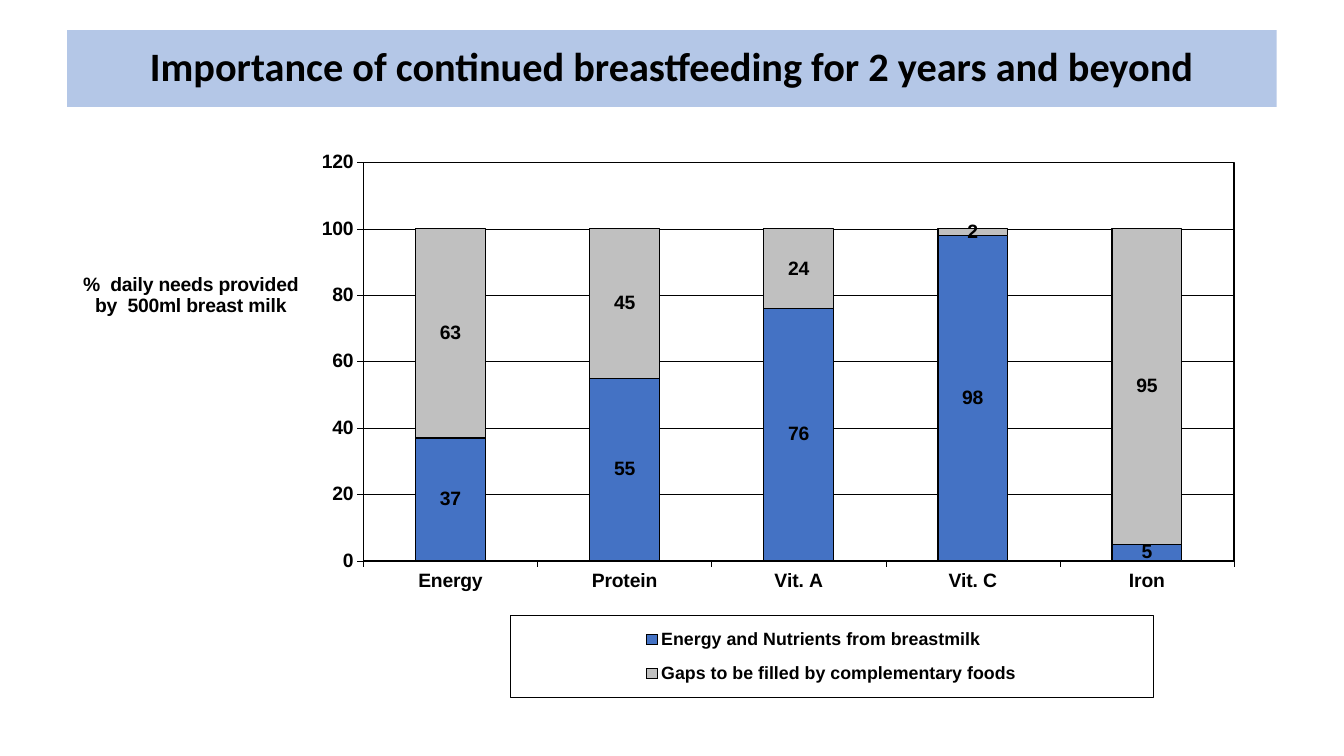
from lxml import etree
from pptx import Presentation
from pptx import util as u
from pptx.chart import data as cd
from pptx.dml.color import RGBColor
from pptx.enum import chart as ec, text as et
from pptx.oxml import ns

Pt = u.Pt
HUES = {"ink": "000000", "band": "B4C7E7", "milk": "4472C4", "gap": "C0C0C0"}
CATS = ["Energy", "Protein", "Vit. A", "Vit. C", "Iron"]
ROWS = [
    ("Energy and Nutrients from breastmilk", "milk", (37, 55, 76, 98, 5)),
    ("Gaps to be filled by complementary foods", "gap", (63, 45, 24, 2, 95)),
]


def hue(key):
    return RGBColor.from_string(HUES[key])


def set_font(font, name, size):
    font.name, font.size, font.bold = name, Pt(size), True
    font.color.rgb = hue("ink")


def set_line(line, width):
    line.color.rgb = hue("ink")
    line.width = Pt(width)


def layout(x, y, w=None, h=None, inner=False):
    """Manual chart layout, in shares of the chart's size."""
    root = etree.Element(ns.qn("c:layout"), nsmap={"c": ns.nsuri("c")})
    man = etree.SubElement(root, ns.qn("c:manualLayout"))
    pairs = [("layoutTarget", "inner")] if inner else []
    pairs += [("xMode", "edge"), ("yMode", "edge"), ("x", x), ("y", y)]
    if w:
        pairs += [("w", w), ("h", h)]
    for tag, val in pairs:
        etree.SubElement(man, ns.qn("c:" + tag)).set("val", str(val))
    return root


def place(part, after, lay):
    """Put a layout into a chart part, behind the named child or first."""
    for old in part.findall(ns.qn("c:layout")):
        part.remove(old)
    if after:
        part.find(ns.qn(after)).addnext(lay)
    else:
        part.insert(0, lay)


def frame(width):
    """Unfilled black outline for a chart part."""
    prop = etree.Element(ns.qn("c:spPr"), nsmap={k: ns.nsuri(k) for k in "ca"})
    etree.SubElement(prop, ns.qn("a:noFill"))
    line = etree.SubElement(prop, ns.qn("a:ln"), w=str(Pt(width)))
    fill = etree.SubElement(line, ns.qn("a:solidFill"))
    etree.SubElement(fill, ns.qn("a:srgbClr"), val=HUES["ink"])
    return prop


def add_title(slide, x, y, w, h):
    box = slide.shapes.title
    box.left, box.top, box.width, box.height = Pt(x), Pt(y), Pt(w), Pt(h)
    box.fill.solid()
    box.fill.fore_color.rgb = hue("band")
    body = box.text_frame
    body.word_wrap = True
    body.auto_size = et.MSO_AUTO_SIZE.NONE
    body.vertical_anchor = et.MSO_ANCHOR.MIDDLE
    para = body.paragraphs[0]
    para.alignment, para.line_spacing = et.PP_ALIGN.CENTER, 0.9
    run = para.add_run()
    run.text = "Importance of continued breastfeeding for 2 years and beyond"
    set_font(run.font, "Calibri", 28.8)


def add_bars(slide, x, y, w, h):
    data = cd.CategoryChartData()
    data.categories = CATS
    for name, _, vals in ROWS:
        data.add_series(name, vals)
    chart = slide.shapes.add_chart(
        ec.XL_CHART_TYPE.COLUMN_STACKED, Pt(x), Pt(y), Pt(w), Pt(h), data).chart
    chart.has_title = False
    set_font(chart.font, "Arial", 13.8)

    # Bars and their values
    plot = chart.plots[0]
    plot.gap_width, plot.overlap, plot.vary_by_categories = 150, 100, False
    for bar, (_, key, _) in zip(plot.series, ROWS):
        bar.format.fill.solid()
        bar.format.fill.fore_color.rgb = hue(key)
        set_line(bar.format.line, 0.86)
        tags = bar.data_labels
        tags.show_value = True
        tags.position = ec.XL_LABEL_POSITION.CENTER
        set_font(tags.font, "Arial", 13.8)

    # Axes and grid
    axis = chart.value_axis
    for side in (chart.category_axis, axis):
        side.major_tick_mark = ec.XL_TICK_MARK.OUTSIDE
        set_font(side.tick_labels.font, "Arial", 13.8)
        set_line(side.format.line, 0.22)
    axis.minimum_scale, axis.maximum_scale, axis.major_unit = 0, 120, 20
    axis.has_major_gridlines = True
    set_line(axis.major_gridlines.format.line, 0.22)

    # Level axis title
    body = axis.axis_title.text_frame
    run = body.paragraphs[0].add_run()
    run.text = "%  daily needs provided by  500ml breast milk"
    set_font(run.font, "Arial", 13.8)
    turn = axis.axis_title._element.find(".//" + ns.qn("a:bodyPr"))
    turn.set("rot", "0")
    turn.set("vert", "horz")
    place(axis.axis_title._element, "c:tx", layout(0.005, 0.22))

    # Plot area
    area = chart._chartSpace.chart.plotArea
    place(area, None, layout(0.247, 0.044, 0.742, 0.662, True))
    area.append(frame(1))

    # Legend
    chart.has_legend = True
    key = chart.legend
    key.position = ec.XL_LEGEND_POSITION.BOTTOM
    key.include_in_layout = False
    set_font(key.font, "Arial", 12.7)
    place(key._element, "c:legendPos", layout(0.372, 0.797, 0.548, 0.136))
    key._element.find(ns.qn("c:txPr")).addprevious(frame(0.22))


def main():
    deck = Presentation()
    deck.slide_width, deck.slide_height = Pt(960), Pt(540)
    slide = deck.slides.add_slide(deck.slide_layouts[5])
    add_title(slide, 48, 21.6, 864, 54.7)
    add_bars(slide, 52.6, 97.2, 838, 429.8)
    deck.save("out.pptx")


if __name__ == "__main__":
    main()
